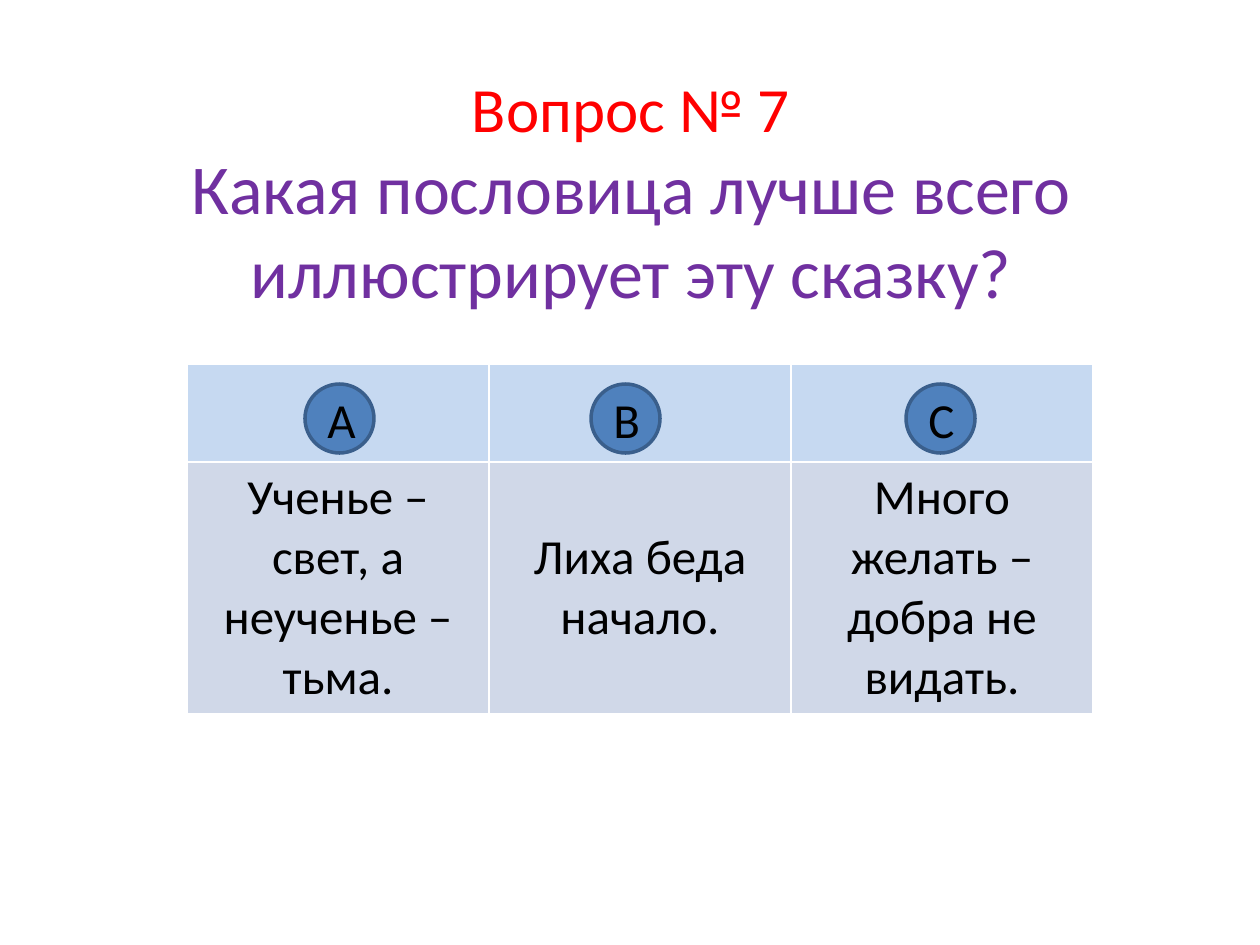
from pptx import Presentation
from pptx import util as u
from pptx.dml.color import RGBColor
from pptx.enum import shapes, text
from lxml import etree

COLORS = {
    "white": "FFFFFF", "red": "FF0000", "purple": "7030A0", "black": "000000",
    "header": "C6D9F1", "answer": "D0D8E8", "badge": "4F81BD", "outline": "3A5F8C",
}
TITLE = [
    ("Вопрос № 7", 36, "red"),
    ("Какая пословица лучше всего иллюстрирует эту сказку?", 40, "purple"),
]
ANSWERS = [
    ("А", 305, "Ученье – свет, а неученье – тьма."),
    ("В", 591, "Лиха беда начало."),
    ("С", 906, "Много желать – добра не видать."),
]
TITLE_BOX = (178, 38, 906, 306)
TABLE_BOX = (187, 364, 906, 344)
ROW_HEIGHTS = (98, 246)
BADGE_TOP, BADGE_SIZE = 384, 69
SCALE = 914400 / 126


def px(*lengths):
    return [u.Emu(round(length * SCALE)) for length in lengths]


def color(name):
    return RGBColor.from_string(COLORS[name])


def paint(fill, name):
    fill.solid()
    fill.fore_color.rgb = color(name)


def add_run(paragraph, wording, size=28, tint="black"):
    paragraph.alignment = text.PP_ALIGN.CENTER
    run = paragraph.add_run()
    run.text = wording
    for key, value in {"name": "Calibri", "size": u.Pt(size), "bold": False}.items():
        setattr(run.font, key, value)
    run.font.color.rgb = color(tint)


presentation = Presentation()
presentation.slide_width, presentation.slide_height = px(1260, 945)
slide = presentation.slides.add_slide(presentation.slide_layouts[5])

title = slide.shapes.title
title.left, title.top, title.width, title.height = px(*TITLE_BOX)
paint(title.fill, "white")
frame = title.text_frame
for key, value in {
    "word_wrap": True,
    "auto_size": text.MSO_AUTO_SIZE.NONE,
    "vertical_anchor": text.MSO_ANCHOR.MIDDLE,
}.items():
    setattr(frame, key, value)
paragraph = frame.paragraphs[0]
for index, (wording, size, tint) in enumerate(TITLE):
    if index:
        paragraph.add_line_break()
    add_run(paragraph, wording, size, tint)

table = slide.shapes.add_table(2, len(ANSWERS), *px(*TABLE_BOX)).table
for row, height in zip(table.rows, px(*ROW_HEIGHTS)):
    row.height = height

for column, (letter, left, answer) in enumerate(ANSWERS):
    paint(table.cell(0, column).fill, "header")
    cell = table.cell(1, column)
    paint(cell.fill, "answer")
    cell.vertical_anchor = text.MSO_ANCHOR.MIDDLE
    add_run(cell.text_frame.paragraphs[0], answer)

    badge = slide.shapes.add_shape(
        shapes.MSO_SHAPE.OVAL, *px(left, BADGE_TOP, BADGE_SIZE, BADGE_SIZE))
    badge.shadow.inherit = False
    paint(badge.fill, "badge")
    badge.line.color.rgb = color("outline")
    badge.line.width = u.Pt(2)
    badge.text_frame.vertical_anchor = text.MSO_ANCHOR.MIDDLE
    add_run(badge.text_frame.paragraphs[0], letter)

presentation.save("out.pptx")
